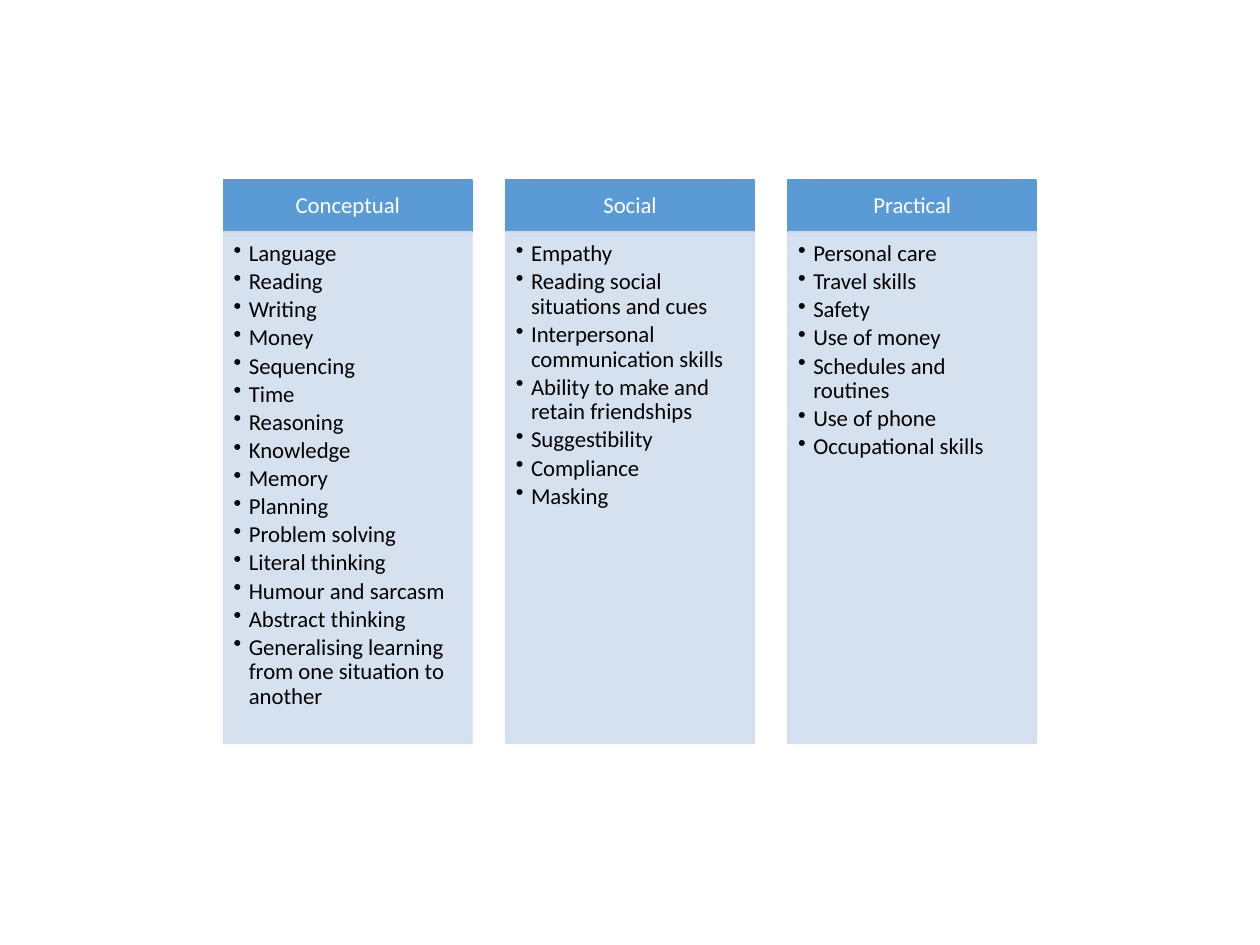
from dataclasses import dataclass

from pptx import Presentation
from pptx.dml.color import RGBColor
from pptx.enum.shapes import MSO_SHAPE
from pptx.enum.text import MSO_ANCHOR, PP_ALIGN
from pptx.oxml.ns import qn
from pptx.oxml.xmlchemy import OxmlElement
from pptx.util import Inches, Pt


@dataclass(frozen=True)
class Theme:
    header: RGBColor = RGBColor(0x5B, 0x9B, 0xD5)
    body: RGBColor = RGBColor(0xD2, 0xDE, 0xEF)
    header_text: RGBColor = RGBColor(0xFF, 0xFF, 0xFF)
    body_text: RGBColor = RGBColor(0, 0, 0)
    font: str = "Calibri"
    size: Pt = Pt(13)


theme = Theme()

SKILLS = {
    "Conceptual": [
        "Language", "Reading", "Writing", "Money", "Sequencing", "Time",
        "Reasoning", "Knowledge", "Memory", "Planning", "Problem solving",
        "Literal thinking", "Humour and sarcasm", "Abstract thinking",
        "Generalising learning from one situation to another",
    ],
    "Social": [
        "Empathy", "Reading social situations and cues",
        "Interpersonal communication skills",
        "Ability to make and retain friendships",
        "Suggestibility", "Compliance", "Masking",
    ],
    "Practical": [
        "Personal care", "Travel skills", "Safety", "Use of money",
        "Schedules and routines", "Use of phone", "Occupational skills",
    ],
}

WIDTH, GAP = 1.97, 0.27
TOP, HEADER_H, BODY_H = 1.43, 0.41, 4.06


def add_panel(s, left, top, height, color, anchor, insets):
    """Add a filled rectangle and return it with its text frame set up."""
    sp = s.shapes.add_shape(MSO_SHAPE.RECTANGLE, Inches(left), Inches(top),
                            Inches(WIDTH), Inches(height))
    sp.shadow.inherit = False
    sp.fill.solid()
    sp.fill.fore_color.rgb = color
    sp.line.color.rgb = color
    sp.line.width = Pt(1)
    tf = sp.text_frame
    tf.word_wrap = True
    tf.vertical_anchor = anchor
    tf.margin_left, tf.margin_top, tf.margin_right, tf.margin_bottom = map(Inches, insets)
    return sp


def add_text(p, text, color, align, space_after):
    p.alignment = align
    p.line_spacing = 0.9
    p.space_after = space_after
    r = p.add_run()
    r.text = text
    r.font.name = theme.font
    r.font.size = theme.size
    r.font.color.rgb = color


prs = Presentation()
prs.slide_width, prs.slide_height = Inches(10), Inches(7.5)
s = prs.slides.add_slide(prs.slide_layouts[6])

first_left = (10 - len(SKILLS) * WIDTH - (len(SKILLS) - 1) * GAP) / 2

for i, (area, skills) in enumerate(SKILLS.items()):
    left = first_left + i * (WIDTH + GAP)

    header = add_panel(s, left, TOP, HEADER_H, theme.header,
                       MSO_ANCHOR.MIDDLE, (0.1, 0.06, 0.1, 0.06))
    add_text(header.text_frame.paragraphs[0], area, theme.header_text,
             PP_ALIGN.CENTER, Pt(4.5))

    body = add_panel(s, left, TOP + HEADER_H, BODY_H, theme.body,
                     MSO_ANCHOR.TOP, (0.08, 0.08, 0.1, 0.11))
    for clr in body._element.spPr.iter(qn("a:srgbClr")):
        alpha = OxmlElement("a:alpha")
        alpha.set("val", "90000")
        clr.append(alpha)

    tf = body.text_frame
    for n, skill in enumerate(skills):
        p = tf.paragraphs[0] if n == 0 else tf.add_paragraph()
        p.level = 1
        pPr = p._p.get_or_add_pPr()
        pPr.set("marL", str(Inches(0.12)))
        pPr.set("indent", str(-Inches(0.12)))
        bullet = OxmlElement("a:buChar")
        bullet.set("char", "•")
        pPr.append(bullet)
        add_text(p, skill, theme.body_text, PP_ALIGN.LEFT, Pt(2))

prs.save("out.pptx")
